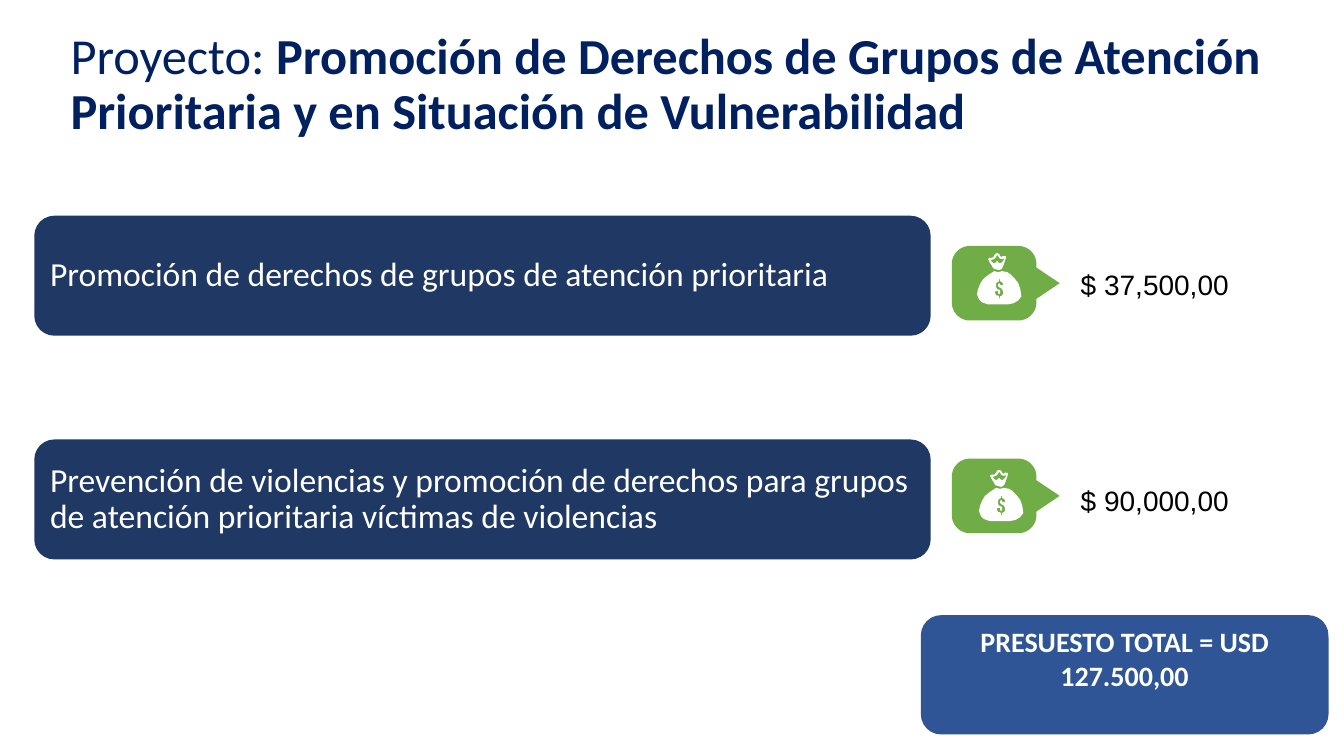
from dataclasses import dataclass
from math import cos, radians, sin

from pptx import Presentation
from pptx.dml.color import RGBColor
from pptx.enum.shapes import MSO_SHAPE
from pptx.enum.text import MSO_ANCHOR, MSO_AUTO_SIZE, PP_ALIGN
from pptx.util import Inches, Pt

ROUNDED = MSO_SHAPE.ROUNDED_RECTANGLE
TOP, MIDDLE = MSO_ANCHOR.TOP, MSO_ANCHOR.MIDDLE
LEFT, CENTER = PP_ALIGN.LEFT, PP_ALIGN.CENTER
FIXED, GROW = MSO_AUTO_SIZE.NONE, MSO_AUTO_SIZE.SHAPE_TO_FIT_TEXT

TITLE = [
    ("Proyecto: ", False),
    ("Promoción de Derechos de Grupos de Atención Prioritaria "
     "y en Situación de Vulnerabilidad", True),
]
COMPONENTS = [
    ("Promoción de derechos de grupos de atención prioritaria", "$ 37,500,00"),
    ("Prevención de violencias y promoción de derechos para grupos "
     "de atención prioritaria víctimas de violencias", "$ 90,000,00"),
]
TOTAL = "PRESUESTO TOTAL = USD 127.500,00"


@dataclass(frozen=True)
class Theme:
    navy: str = "002060"
    bar: str = "203864"
    green: str = "70AD47"
    total: str = "2F5597"
    total_line: str = "325491"
    white: str = "FFFFFF"
    black: str = "000000"
    text_font: str = "Calibri"
    amount_font: str = "Arial"
    title_size: int = 36
    bar_size: int = 24
    small_size: int = 20


THEME = Theme()

SLIDE_SIZE = (13.33, 7.5)
TITLE_BOX = (0.6, 0.26, 12.42, 1.17)
TOTAL_BOX = (9.14, 6.11, 4.03, 1.17)
BAR_BOX, BAR_PITCH = (0.34, 2.14, 8.89, 1.19), 2.22
TAG_AT, TAG_PITCH = (9.44, 2.44), 2.11
BAG_AT, BAG_STEP = (9.69, 2.51), (0.02, 2.15)
AMOUNT_BOX, AMOUNT_PITCH = (10.62, 2.6, 2.11, 0.44), 2.15
TAG_WIDTH, TAG_HEIGHT, TAG_RADIUS = 0.84, 0.74, 0.18
TAG_TIP, TAG_TIP_HALF = 0.23, 0.155

BAG_UNIT = 0.01
BAG_BODY = [
    (25, 18), (30, 19), (33, 21), (37, 25), (41, 30), (43, 36), (44, 43), (41, 47),
    (36, 50), (30, 51), (23, 51), (17, 51), (11, 51), (5, 49), (2, 46), (0, 41),
    (1, 36), (3, 31), (6, 26), (11, 22), (17, 18), (21, 19),
]
BAG_DOLLAR = [
    (22, 26), (22, 28), (20, 29), (19, 30), (19, 34), (20, 36), (21, 36), (23, 37),
    (23, 40), (22, 41), (21, 40), (21, 38), (18, 38), (18, 40), (19, 42), (20, 42),
    (22, 43), (22, 45), (23, 45), (23, 43), (25, 42), (26, 40), (26, 39), (25, 36),
    (24, 35), (22, 34), (21, 33), (21, 31), (22, 30), (23, 31), (23, 32), (26, 32),
    (26, 31), (25, 29), (23, 28), (23, 26),
]
BAG_CROWN = [
    (20, 0), (22, 1), (23, 3), (24, 4), (26, 3), (28, 3), (29, 4), (28, 7), (27, 10),
    (26, 13), (25, 15), (24, 16), (22, 17), (18, 16), (16, 15), (15, 13), (13, 10),
    (12, 8), (11, 6), (12, 5), (15, 5), (17, 3), (18, 1),
]
BAG_CROWN_HOLE = [
    (20, 2), (19, 4), (17, 6), (14, 7), (14, 8), (15, 9), (16, 10), (18, 10), (19, 9),
    (20, 8), (21, 9), (22, 10), (24, 10), (25, 9), (26, 8), (27, 6), (27, 5), (26, 6),
    (24, 6), (22, 5), (21, 3),
]
BAG = [[(x * BAG_UNIT, y * BAG_UNIT) for x, y in contour]
       for contour in (BAG_BODY, BAG_DOLLAR, BAG_CROWN, BAG_CROWN_HOLE)]


def corner(center_x, center_y, start):
    angles = [radians(start + step) for step in range(0, 91, 10)]
    return [(center_x + TAG_RADIUS * cos(angle), center_y + TAG_RADIUS * sin(angle))
            for angle in angles]


def tag_outline():
    near, right, bottom = TAG_RADIUS, TAG_WIDTH - TAG_RADIUS, TAG_HEIGHT - TAG_RADIUS
    middle = TAG_HEIGHT / 2
    pointer = [(TAG_WIDTH, middle - TAG_TIP_HALF), (TAG_WIDTH + TAG_TIP, middle),
               (TAG_WIDTH, middle + TAG_TIP_HALF)]
    return (corner(near, near, 180) + corner(right, near, 270) + pointer
            + corner(right, bottom, 0) + corner(near, bottom, 90))


def inches(lengths):
    return [Inches(length) for length in lengths]


def shifted(box, down):
    left, top, *size = box
    return (left, top + down, *size)


def paint(shape, fill, line=None):
    shape.shadow.inherit = False
    shape.fill.solid()
    shape.fill.fore_color.rgb = RGBColor.from_string(fill)
    if line:
        shape.line.color.rgb = RGBColor.from_string(line)
        shape.line.width = Pt(1)
    else:
        shape.line.fill.background()


def write(shape, runs, font, size, color, align=LEFT, anchor=TOP, spacing=1.0, fit=FIXED):
    frame = shape.text_frame
    frame.word_wrap = True
    frame.auto_size = fit
    frame.vertical_anchor = anchor
    paragraph = frame.paragraphs[0]
    paragraph.alignment = align
    paragraph.line_spacing = spacing
    for text, bold in runs:
        run = paragraph.add_run()
        run.text = text
        run.font.name = font
        run.font.size = Pt(size)
        run.font.bold = bold
        run.font.color.rgb = RGBColor.from_string(color)


def add_outline(slide, contours, origin, fill):
    builder = None
    for contour in contours:
        start, *rest = [inches(point) for point in contour]
        if builder is None:
            builder = slide.shapes.build_freeform(*start)
        else:
            builder.move_to(*start)
        builder.add_line_segments(rest, close=True)
    paint(builder.convert_to_shape(*inches(origin)), fill)


def add_title(slide):
    title = slide.shapes.title
    title.left, title.top, title.width, title.height = inches(TITLE_BOX)
    write(title, TITLE, THEME.text_font, THEME.title_size, THEME.navy, spacing=0.9)


def add_component(slide, row, name, amount):
    bar = slide.shapes.add_shape(ROUNDED, *inches(shifted(BAR_BOX, row * BAR_PITCH)))
    paint(bar, THEME.bar)
    write(bar, [(name, False)], THEME.text_font, THEME.bar_size, THEME.white,
          anchor=MIDDLE, spacing=0.9)
    add_outline(slide, [tag_outline()], shifted(TAG_AT, row * TAG_PITCH), THEME.green)
    bag_origin = [start + row * step for start, step in zip(BAG_AT, BAG_STEP)]
    add_outline(slide, BAG, bag_origin, THEME.white)
    box = slide.shapes.add_textbox(*inches(shifted(AMOUNT_BOX, row * AMOUNT_PITCH)))
    write(box, [(amount, False)], THEME.amount_font, THEME.small_size, THEME.black, fit=GROW)


def add_total(slide):
    total = slide.shapes.add_shape(ROUNDED, *inches(TOTAL_BOX))
    paint(total, THEME.total, THEME.total_line)
    write(total, [(TOTAL, True)], THEME.text_font, THEME.small_size, THEME.white,
          align=CENTER, anchor=MIDDLE)
    total.text_frame.margin_bottom = Inches(0.38)


def main():
    presentation = Presentation()
    presentation.slide_width, presentation.slide_height = inches(SLIDE_SIZE)
    slide = presentation.slides.add_slide(presentation.slide_layouts[5])
    add_title(slide)
    for row, (name, amount) in enumerate(COMPONENTS):
        add_component(slide, row, name, amount)
    add_total(slide)
    presentation.save("out.pptx")


if __name__ == "__main__":
    main()
